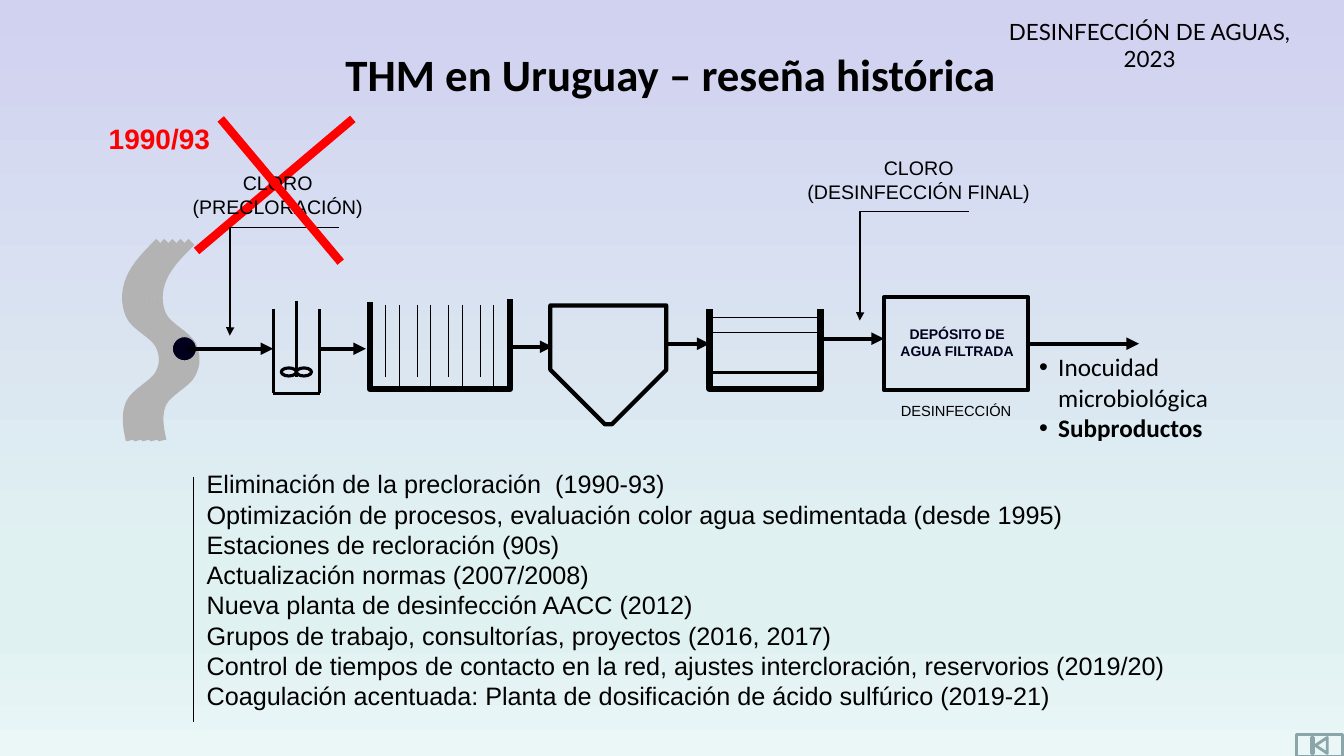
from dataclasses import dataclass

from lxml import etree
from pptx import Presentation
from pptx.dml.color import RGBColor
from pptx.enum.shapes import MSO_CONNECTOR, MSO_SHAPE
from pptx.enum.text import MSO_ANCHOR, MSO_AUTO_SIZE, PP_ALIGN
from pptx.oxml.ns import qn
from pptx.util import Inches, Pt

RECT, OVAL = MSO_SHAPE.RECTANGLE, MSO_SHAPE.OVAL
SNIP, BUTTON = MSO_SHAPE.SNIP_2_SAME_RECTANGLE, MSO_SHAPE.ACTION_BUTTON_BEGINNING
STRAIGHT, ELBOW = MSO_CONNECTOR.STRAIGHT, MSO_CONNECTOR.ELBOW
LEFT, CENTER = PP_ALIGN.LEFT, PP_ALIGN.CENTER
BLACK, RED, GRAY, NAVY = "000000", "FF0000", "B3B3B3", "00001C"


@dataclass
class Box:
    kind: int
    x: float
    y: float
    w: float
    h: float
    weight: float
    color: str = BLACK
    fill: str = ""
    rotation: float = 0
    adjustments: tuple = ()


@dataclass
class Line:
    x1: float
    y1: float
    x2: float
    y2: float
    weight: float
    color: str = BLACK
    arrow: bool = False
    kind: int = STRAIGHT


@dataclass
class Label:
    x: float
    y: float
    w: float
    h: float
    text: str
    size: float
    font: str = "Arial"
    color: str = BLACK
    bold: bool = False
    align: int = CENTER


def rgb(color: str) -> RGBColor:
    return RGBColor.from_string(color)


def style_outline(sp, color: str, weight: float, fill: str = "") -> None:
    sp.shadow.inherit = False
    if fill:
        sp.fill.solid()
        sp.fill.fore_color.rgb = rgb(fill)
    else:
        sp.fill.background()
    sp.line.color.rgb = rgb(color)
    sp.line.width = Pt(weight)


def draw_box(s, b: Box):
    sp = s.shapes.add_shape(b.kind, Inches(b.x), Inches(b.y), Inches(b.w), Inches(b.h))
    style_outline(sp, b.color, b.weight, b.fill)
    sp.rotation = b.rotation
    for i, value in enumerate(b.adjustments):
        sp.adjustments[i] = value
    return sp


def draw_line(s, ln: Line):
    sp = s.shapes.add_connector(ln.kind, Inches(ln.x1), Inches(ln.y1), Inches(ln.x2), Inches(ln.y2))
    sp.line.color.rgb = rgb(ln.color)
    sp.line.width = Pt(ln.weight)
    props = sp._element.spPr
    if ln.arrow:
        etree.SubElement(props.find(qn("a:ln")), qn("a:tailEnd"), type="triangle")
    if ln.kind == ELBOW:
        guides = props.find(qn("a:prstGeom")).get_or_add_avLst()
        etree.SubElement(guides, qn("a:gd"), name="adj1", fmla="val 99700")
    etree.SubElement(props, qn("a:effectLst"))
    return sp


def draw_outline(s, points: list, color: str, weight: float, curved: bool = False) -> None:
    points = [(Inches(x), Inches(y)) for x, y in points]
    builder = s.shapes.build_freeform(*points[0])
    builder.add_line_segments(points[1:], close=False)
    sp = builder.convert_to_shape()
    style_outline(sp, color, weight)
    if curved:  # each three segments become one cubic curve
        segments = sp._element.findall(".//" + qn("a:lnTo"))
        for i in range(0, len(segments), 3):
            curve = etree.Element(qn("a:cubicBezTo"))
            segments[i].addprevious(curve)
            for segment in segments[i:i + 3]:
                curve.append(segment[0])
                segment.getparent().remove(segment)


def write(p, text: str, *, size: float, font: str = "Arial", color: str = BLACK,
          bold: bool = False, align: int = LEFT, bullet: str = "") -> None:
    r = p.add_run()
    r.text = text
    r.font.size, r.font.name, r.font.bold = Pt(size), font, bold
    r.font.color.rgb = rgb(color)
    p.alignment = align
    p.space_before = Pt(0)
    props = p._p.get_or_add_pPr()
    indent = Inches(0.19) if bullet else 0
    props.set("marL", str(indent))
    props.set("indent", str(-indent))
    if bullet:
        etree.SubElement(props, qn("a:buFont"), typeface="Arial")
        etree.SubElement(props, qn("a:buChar"), char=bullet)
    else:
        etree.SubElement(props, qn("a:buNone"))


def place(sp, x: float, y: float, w: float, h: float):
    sp.left, sp.top, sp.width, sp.height = Inches(x), Inches(y), Inches(w), Inches(h)
    tf = sp.text_frame
    tf.word_wrap, tf.auto_size = True, MSO_AUTO_SIZE.NONE
    tf.vertical_anchor = MSO_ANCHOR.TOP
    return tf


def draw_label(s, t: Label) -> None:
    tf = place(s.shapes.add_textbox(0, 0, 0, 0), t.x, t.y, t.w, t.h)
    write(tf.paragraphs[0], t.text, size=t.size, font=t.font, color=t.color,
          bold=t.bold, align=t.align)


def paint_background(s) -> None:
    fill = s.background.fill
    fill.gradient()
    fill.gradient_angle = 270
    stops = s.element.find(".//" + qn("a:gsLst"))
    for stop in list(stops):
        stops.remove(stop)
    for pos, color in ((0, "D1D1F0"), (74, "E0F1F2"), (83, "E0F1F2"), (100, "EBF6F7")):
        stop = etree.SubElement(stops, qn("a:gs"), pos=str(pos * 1000))
        etree.SubElement(stop, qn("a:srgbClr"), val=color)


# Start, then two control points and an end for each curve of a river strand
RIVER = ((1.58, 2.4), (1.46, 2.52), (1.34, 2.64), (1.29, 2.77), (1.24, 2.89), (1.24, 3.02),
         (1.29, 3.13), (1.34, 3.24), (1.53, 3.32), (1.58, 3.42), (1.63, 3.52), (1.63, 3.62),
         (1.58, 3.71), (1.53, 3.81), (1.34, 3.89), (1.29, 4), (1.24, 4.11), (1.26, 4.24),
         (1.29, 4.37))
MEASURES = (
    "Eliminación de la precloración  (1990-93)",
    "Optimización de procesos, evaluación color agua sedimentada (desde 1995)",
    "Estaciones de recloración (90s)",
    "Actualización normas (2007/2008)",
    "Nueva planta de desinfección AACC (2012)",
    "Grupos de trabajo, consultorías, proyectos (2016, 2017)",
    "Control de tiempos de contacto en la red, ajustes intercloración, reservorios (2019/20)",
    "Coagulación acentuada: Planta de dosificación de ácido sulfúrico (2019-21)",
)
LABELS = (
    Label(9.82, 0.13, 3.17, 0.37, "DESINFECCIÓN DE AGUAS, 2023", 16, "Lato"),
    Label(0.98, 1.16, 1.62, 0.44, "1990/93", 20, color=RED, bold=True, align=LEFT),
    Label(7.88, 1.5, 2.47, 0.57, "CLORO (DESINFECCIÓN FINAL)", 14),
    Label(1.52, 1.65, 2.47, 0.57, "CLORO (PRECLORACIÓN)", 14),
    Label(8.84, 3.94, 1.34, 0.28, "DESINFECCIÓN", 10.5, align=LEFT),
    Label(8.78, 3.18, 1.43, 0.44, "DEPÓSITO DE AGUA FILTRADA", 10, color=NAVY, bold=True),
)
BOXES = (
    Box(BUTTON, 12.86, 7.29, 0.46, 0.21, 2, "8AA6A8"),
    Box(OVAL, 1.71, 3.34, 0.24, 0.24, 0.75, GRAY, NAVY),  # intake
    Box(OVAL, 2.79, 3.65, 0.15, 0.08, 2.25),  # mixer blades
    Box(OVAL, 2.94, 3.65, 0.15, 0.08, 2.25),
    Box(RECT, 7.04, 3.15, 1.1, 0.55, 1),  # filter layers
    Box(RECT, 7.04, 3.7, 1.1, 0.16, 2.25),
    Box(RECT, 7.04, 3.3, 1.1, 0.39, 0.75),
    Box(SNIP, 5.46, 3.03, 1.15, 1.18, 3, rotation=180, adjustments=(0.471, 0)),  # settler
)
LINES = (
    Line(2.71, 3.9, 3.17, 3.9, 2.25),  # mixing tank
    Line(2.71, 3.07, 2.71, 3.9, 2.25),
    Line(3.17, 3.07, 3.17, 3.9, 2.25),
    Line(2.94, 3.74, 2.94, 2.99, 2.25),
    *(Line(x, 3.03, x, 3.74 if i % 2 == 0 else 3.86, 0.75)  # flocculator baffles
      for i, x in enumerate((3.82, 3.96, 4.14, 4.27, 4.45, 4.59, 4.77, 4.9))),
    *(Line(x1, y, x2, y, 3, arrow=True)  # water flow
      for x1, x2, y in ((1.87, 2.71, 3.46), (3.18, 3.63, 3.46), (5.07, 5.48, 3.44),
                        (6.62, 7.04, 3.41), (8.11, 8.77, 3.36))),
    Line(9.61, 2.1, 8.53, 3.18, 1, arrow=True, kind=ELBOW),  # chlorine dosing
    Line(3.36, 2.26, 2.28, 3.33, 1, arrow=True, kind=ELBOW),
    Line(3.38, 2.6, 2.19, 1.18, 6, RED),
    Line(1.92, 4.73, 1.92, 7.16, 0.75),  # rule beside the list
)


def main() -> None:
    prs = Presentation()
    prs.slide_width, prs.slide_height = Inches(40 / 3), Inches(7.5)
    s = prs.slides.add_slide(prs.slide_layouts[1])
    paint_background(s)

    # Title and list of measures
    p = place(s.shapes.title, -0.01, 0.38, 13.33, 0.65).paragraphs[0]
    write(p, "THM en Uruguay – reseña histórica", size=32, font="Calibri", bold=True, align=CENTER)
    p.line_spacing, p.space_after = 1.07, Pt(4)
    tf = place(s.placeholders[1], 1.95, 4.6, 10.22, 2.56)
    for i, measure in enumerate(MEASURES):
        write(tf.add_paragraph() if i else tf.paragraphs[0], measure, size=18)

    # River, tanks and labels; one stroke of the red cross lies below the labels
    draw_line(s, Line(3.5, 1.18, 1.95, 2.49, 6, RED))
    for strand in range(5):
        draw_outline(s, [(x + 0.08 * strand, y) for x, y in RIVER], GRAY, 6, curved=True)
    for box in BOXES:
        draw_box(s, box)
    draw_outline(s, [(7.04, 3.07), (7.04, 3.86), (8.14, 3.86), (8.14, 3.07)], BLACK, 4.5)
    draw_outline(s, [(3.67, 3), (3.67, 3.86), (5.06, 3.86), (5.06, 2.97)], BLACK, 4.5)
    tank = draw_box(s, Box(RECT, 8.77, 2.95, 1.43, 0.92, 3))
    for label in LABELS:
        draw_label(s, label)

    # Connections
    for line in LINES:
        draw_line(s, line)
    draw_line(s, Line(10.2, 3.41, 11.3, 3.41, 3, arrow=True)).begin_connect(tank, 3)

    # Outcomes
    tf = place(s.shapes.add_textbox(0, 0, 0, 0), 10.21, 3.44, 2.19, 1.01)
    write(tf.paragraphs[0], "Inocuidad microbiológica", size=18, font="Calibri", bullet="•")
    write(tf.add_paragraph(), "Subproductos", size=18, font="Calibri", bold=True, bullet="•")

    prs.save("out.pptx")


if __name__ == "__main__":
    main()
